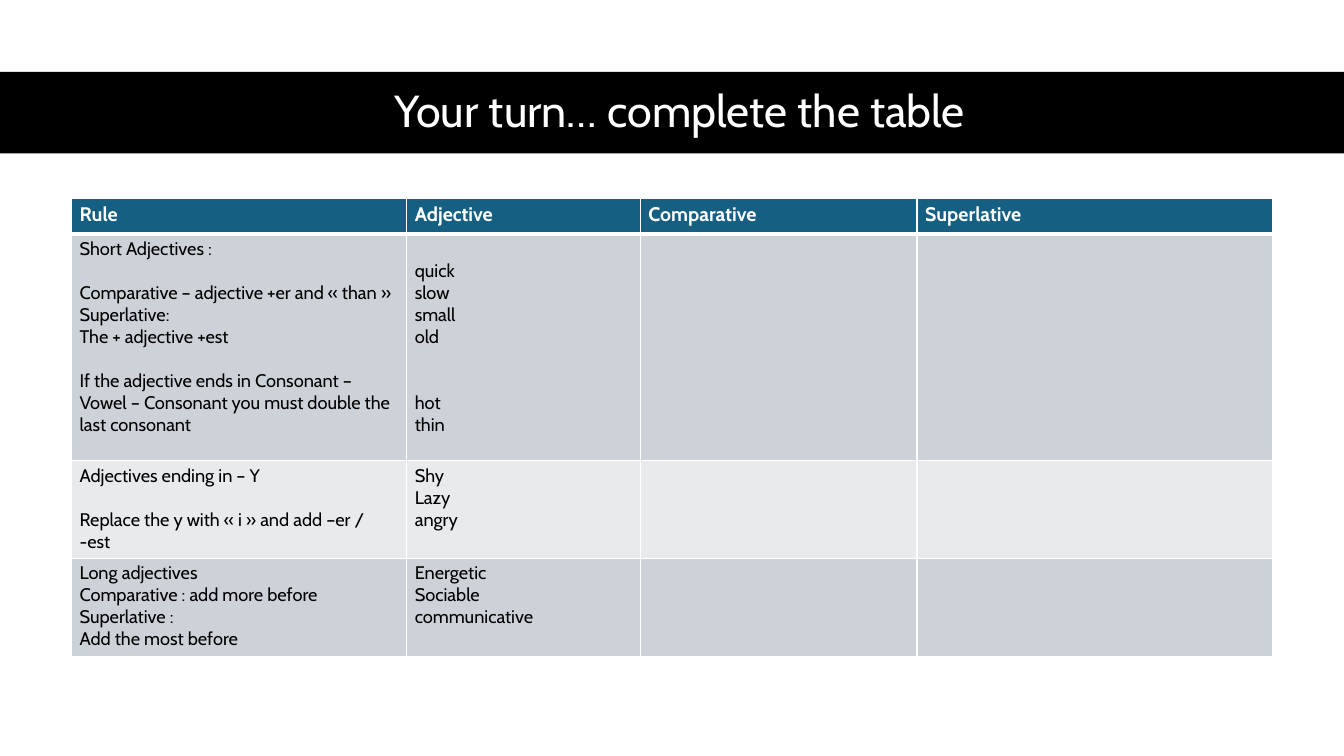
from lxml.etree import SubElement
from pptx import Presentation
from pptx.dml.color import RGBColor
from pptx.enum.shapes import MSO_SHAPE as Shape
from pptx.enum.text import MSO_ANCHOR as Anchor, MSO_AUTO_SIZE as AutoSize, PP_ALIGN as Align
from pptx.oxml.ns import qn
from pptx.util import Inches, Pt

FONT = "Cabin"
BLACK, WHITE = "000000", "FFFFFF"
HEADER_FILL = "156082"
BAND_FILLS = ("CCD2D8", "E8EAED")
LINE_PITCH = 15.75  # points per line of body text

COLUMN_WIDTHS = (3.33, 2.32, 2.75, 3.53)
ROW_HEIGHTS = (0.35, 2.25, 0.97, 0.97)
HEADINGS = ("Rule", "Adjective", "Comparative", "Superlative")
# An empty string stands for one line of space above the next line of text.
EXERCISES = (
    (("Short Adjectives :", "", "Comparative – adjective +er and «\u00a0than\u00a0»",
      "Superlative:", "The + adjective +est", "",
      "If the adjective ends in Consonant – Vowel – Consonant you must double the last consonant"),
     ("", "quick", "slow", "small", "old", "", "", "hot", "thin")),
    (("Adjectives ending in – Y", "", "Replace the y with «\u00a0i\u00a0» and add –er / -est"),
     ("Shy", "Lazy", "angry")),
    (("Long adjectives", "Comparative : add more before", "Superlative :",
      "Add the most before"),
     ("Energetic", "Sociable", "communicative")),
)


def color(hex_code):
    return RGBColor.from_string(hex_code)


def paint(fill, hex_code):
    fill.solid()
    fill.fore_color.rgb = color(hex_code)


def write(frame, lines, size, ink=BLACK, bold=False, align=Align.LEFT, spacing=None):
    """Write lines as paragraphs; empty strings become space above the next one."""
    gap, started = 0, False
    for line in lines:
        if not line:
            gap += LINE_PITCH
            continue
        paragraph = frame.add_paragraph() if started else frame.paragraphs[0]
        paragraph.alignment = align
        if spacing:
            paragraph.line_spacing = spacing
        if gap and started:
            paragraph.space_before = Pt(gap)
        elif gap:
            frame.margin_top += Pt(gap)
        run = paragraph.add_run()
        run.text = line
        run.font.name, run.font.size, run.font.bold = FONT, Pt(size), bold
        run.font.color.rgb = color(ink)
        gap, started = 0, True


def add_borders(cell, **widths):
    """Draw white borders; widths are points keyed by side: L, R, T, B."""
    properties = cell._tc.get_or_add_tcPr()
    for position, side in enumerate("LRTB"):
        border = SubElement(properties, qn(f"a:ln{side}"), w=str(Pt(widths.get(side, 1))))
        fill = SubElement(border, qn("a:solidFill"))
        SubElement(fill, qn("a:srgbClr"), val=WHITE)
        properties.insert(position, border)


def add_title_band(slide, left, top, width, height):
    band = slide.shapes.add_shape(Shape.RECTANGLE, left, top, width, height)
    band.shadow.inherit = False
    paint(band.fill, BLACK)
    band.line.fill.background()

    title = slide.shapes.title
    # Bring the title in front of the band.
    band._element.addnext(title._element)
    title.left, title.top = left + round(width * 0.046), top
    title.width, title.height = round(width * 0.92), height
    frame = title.text_frame
    frame.word_wrap, frame.auto_size = True, AutoSize.NONE
    frame.vertical_anchor = Anchor.MIDDLE
    write(frame, ["Your turn… complete the table"], 32, WHITE, align=Align.CENTER, spacing=0.9)


def add_exercise_table(slide, left, top, width, height):
    rows = [[(heading,) for heading in HEADINGS], *EXERCISES]
    table = slide.shapes.add_table(len(rows), len(HEADINGS), left, top, width, height).table
    for column, share in zip(table.columns, COLUMN_WIDTHS):
        column.width = round(width * share / sum(COLUMN_WIDTHS))
    for row, share in zip(table.rows, ROW_HEIGHTS):
        row.height = round(height * share / sum(ROW_HEIGHTS))

    for r, texts in enumerate(rows):
        is_header = r == 0
        for c in range(len(HEADINGS)):
            cell = table.cell(r, c)
            cell.margin_left = cell.margin_right = Inches(0.08)
            cell.margin_top = cell.margin_bottom = Inches(0.04)
            paint(cell.fill, HEADER_FILL if is_header else BAND_FILLS[(r - 1) % 2])
            add_borders(cell, T=3 if r == 1 else 1, B=3 if is_header else 1)
            if c < len(texts):
                write_cell(cell, texts[c], is_header)


def write_cell(cell, lines, is_header):
    if is_header:
        write(cell.text_frame, lines, 14, WHITE, bold=True)
        return
    leading = next(i for i, line in enumerate(lines) if line)
    cell.margin_top += Pt(leading * LINE_PITCH)
    write(cell.text_frame, lines[leading:], 13)


def main():
    deck = Presentation()
    deck.slide_width, deck.slide_height = Inches(13.33), Inches(7.5)
    slide = deck.slides.add_slide(deck.slide_layouts[5])
    paint(slide.background.fill, WHITE)
    width, height = deck.slide_width, deck.slide_height
    add_title_band(slide, 0, round(height * 0.095), width, round(height * 0.108))
    add_exercise_table(slide, Inches(0.71), Inches(1.97), Inches(11.91), Inches(4.54))
    deck.save("out.pptx")


if __name__ == "__main__":
    main()
